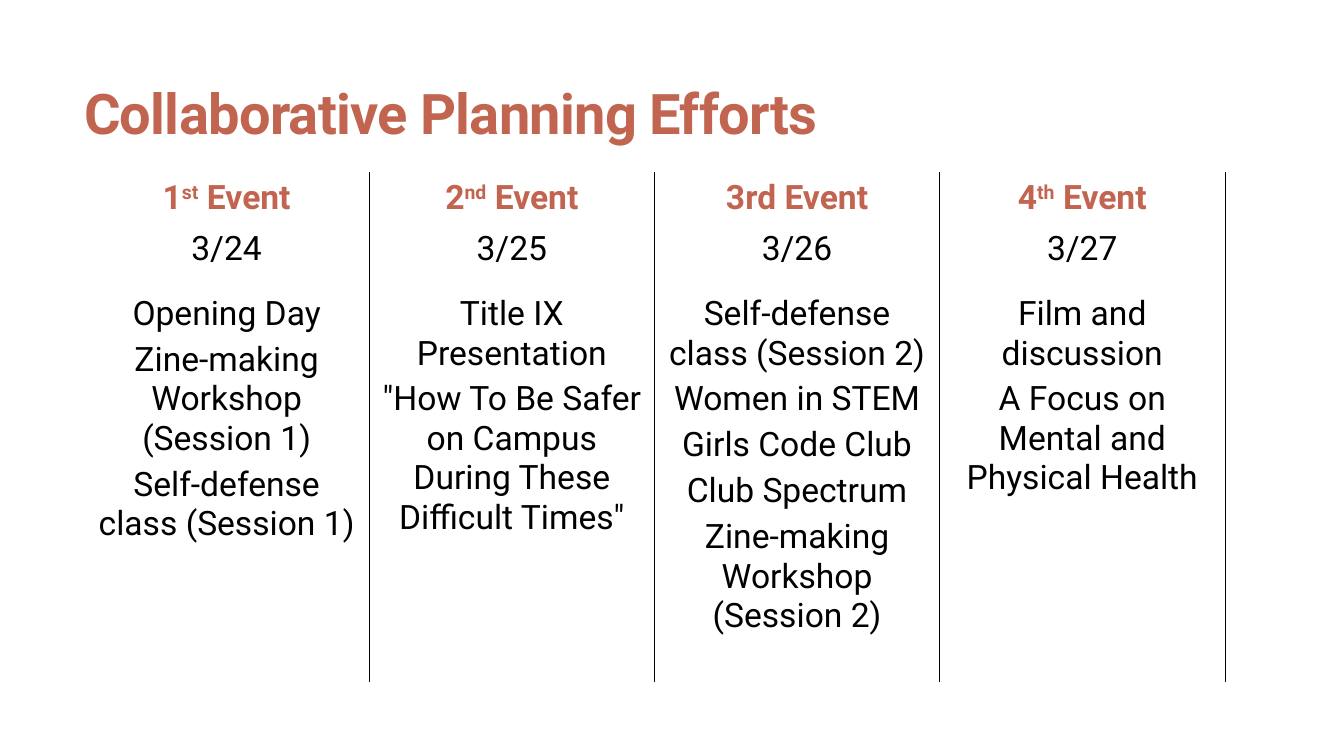
"""Build the slide that lists four collaborative events in a ruled table."""
from dataclasses import dataclass

from lxml import etree
from pptx import Presentation
from pptx.dml.color import RGBColor
from pptx.enum import text
from pptx.oxml import ns
from pptx.util import Pt

FONT = "Roboto"
ACCENT = "C16550"
BLACK = "000000"
LEFT, TABLE_TOP, COL_WIDTH = 60, 123.1, 203.75
ROW_HEIGHTS = (36.7, 35.3, 291.6)


@dataclass
class Event:
    number: str
    suffix: str
    label: str
    date: str
    activities: list[str]


EVENTS = [
    Event("1", "st", " Event", "3/24", [
        "Opening Day",
        "Zine-making Workshop (Session 1)",
        "Self-defense class (Session 1)",
    ]),
    Event("2", "nd", " Event", "3/25", [
        "Title IX Presentation",
        '"How To Be Safer on Campus During These Difficult Times"',
    ]),
    Event("3rd Event", "", "", "3/26", [
        "Self-defense class (Session 2)",
        "Women in STEM",
        "Girls Code Club",
        "Club Spectrum",
        "Zine-making Workshop (Session 2)",
    ]),
    Event("4", "th", " Event", "3/27", [
        "Film and discussion",
        "A Focus on Mental and Physical Health",
    ]),
]


def rgb(color: str) -> RGBColor:
    return RGBColor.from_string(color)


def add_run(p, words: str, size: float, color: str, bold: bool = False):
    r = p.add_run()
    r.text = words
    r.font.name = FONT
    r.font.size = Pt(size)
    r.font.bold = bold
    r.font.color.rgb = rgb(color)
    return r


def add_title(s, words: str) -> None:
    tf = s.shapes.add_textbox(Pt(LEFT), Pt(56.2), Pt(840), Pt(48.2)).text_frame
    tf.word_wrap = True
    tf.vertical_anchor = text.MSO_ANCHOR.BOTTOM
    tf.margin_left = tf.margin_top = tf.margin_right = tf.margin_bottom = 0
    r = add_run(tf.paragraphs[0], words, 40, ACCENT, True)
    r.font._element.set("spc", "-50")


def add_borders(cell, ruled: str) -> None:
    tc_pr = cell._tc.get_or_add_tcPr()
    for side in "LRTB":
        ln = etree.SubElement(tc_pr, ns.qn(f"a:ln{side}"), w=str(Pt(0.5)))
        if side in ruled:
            fill = etree.SubElement(ln, ns.qn("a:solidFill"))
            etree.SubElement(fill, ns.qn("a:srgbClr"), val=BLACK)
        else:
            etree.SubElement(ln, ns.qn("a:noFill"))


def add_heading(p, event: Event) -> None:
    for part in (event.number, event.suffix, event.label):
        if part:
            r = add_run(p, part, 24, ACCENT, True)
            if part == event.suffix:
                r.font._element.set("baseline", "30000")


def add_lines(tf, lines: list[str]) -> None:
    for i, line in enumerate(lines):
        p = tf.add_paragraph() if i else tf.paragraphs[0]
        p.alignment = text.PP_ALIGN.CENTER
        if i:
            p.space_before = Pt(4.6)
        add_run(p, line, 24, BLACK)


def add_events(s, events: list[Event]) -> None:
    table = s.shapes.add_table(
        len(ROW_HEIGHTS), len(events), Pt(LEFT), Pt(TABLE_TOP),
        Pt(COL_WIDTH * len(events)), Pt(sum(ROW_HEIGHTS))).table
    table.first_row = table.horz_banding = False
    for row, height in zip(table.rows, ROW_HEIGHTS):
        row.height = Pt(height)
    for col, event in enumerate(events):
        table.columns[col].width = Pt(COL_WIDTH)
        heading, date, activities = (table.cell(i, col) for i in range(3))
        for cell in (heading, date, activities):
            add_borders(cell, "LR" if col else "R")
            cell.fill.background()
            cell.vertical_anchor = text.MSO_ANCHOR.MIDDLE
        p = heading.text_frame.paragraphs[0]
        p.alignment = text.PP_ALIGN.CENTER
        add_heading(p, event)
        add_lines(date.text_frame, [event.date])
        activities.vertical_anchor = text.MSO_ANCHOR.TOP
        activities.margin_top = Pt(14.4)
        add_lines(activities.text_frame, event.activities)


def main() -> None:
    prs = Presentation()
    prs.slide_width, prs.slide_height = Pt(960), Pt(540)
    s = prs.slides.add_slide(prs.slide_layouts[6])
    add_title(s, "Collaborative Planning Efforts")
    add_events(s, EVENTS)
    prs.save("out.pptx")


if __name__ == "__main__":
    main()
